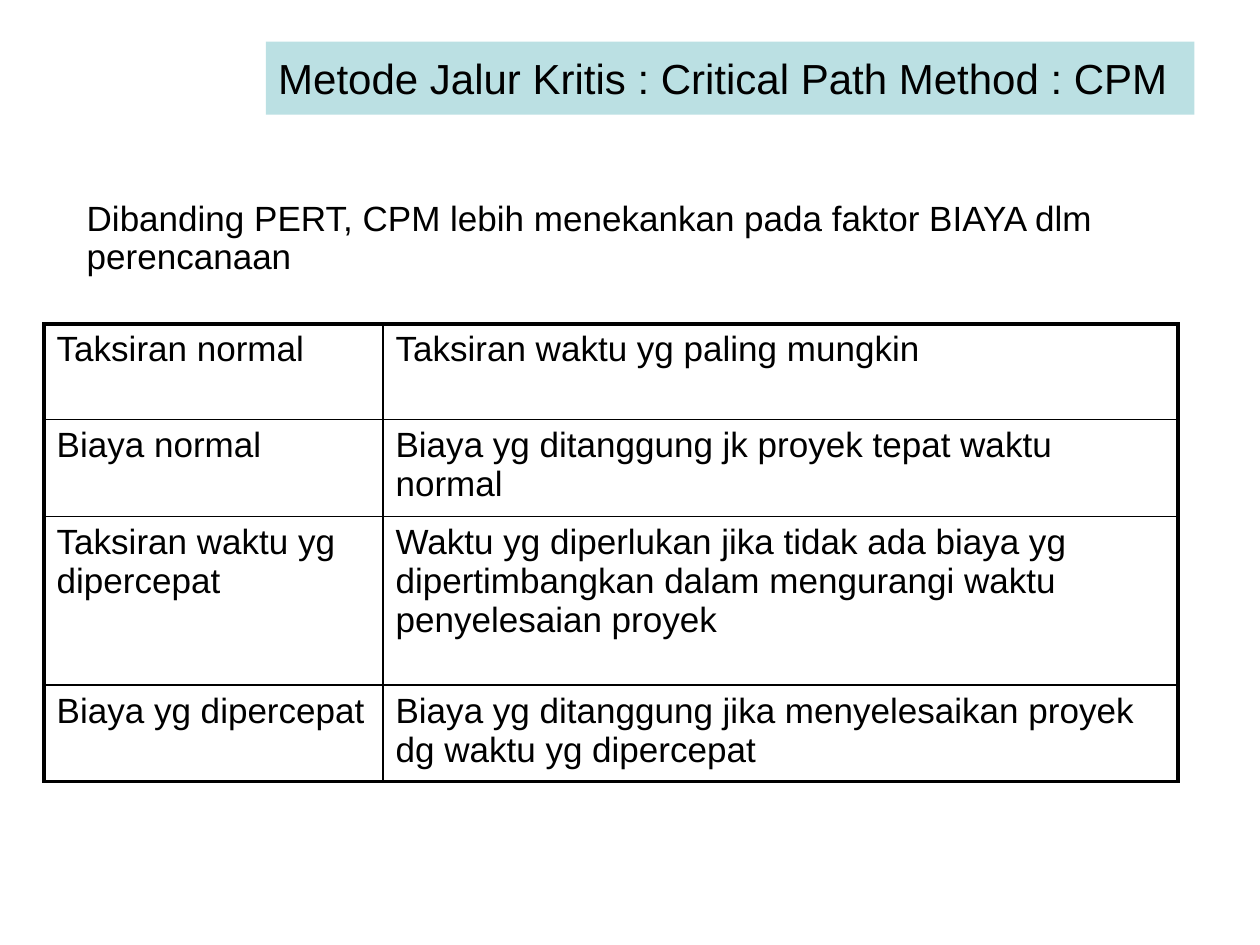
from lxml import etree
from pptx import Presentation
from pptx.dml.color import RGBColor
from pptx.enum.shapes import MSO_SHAPE
from pptx.enum.text import MSO_ANCHOR, PP_ALIGN
from pptx.oxml.ns import qn
from pptx.util import Inches, Pt

RECTANGLE = MSO_SHAPE.RECTANGLE
MIDDLE = MSO_ANCHOR.MIDDLE
LEFT = PP_ALIGN.LEFT
BLACK = RGBColor(0x00, 0x00, 0x00)
PALE_TEAL = RGBColor(0xBB, 0xE0, 0xE3)
FONT = "Arial"
OUTER_LINE, INNER_LINE = Pt(2.25), Pt(1)

TITLE = "Metode Jalur Kritis : Critical Path Method : CPM"
INTRO = "Dibanding PERT, CPM lebih menekankan pada faktor BIAYA dlm perencanaan"
TERMS = [
    ("Taksiran normal", "Taksiran waktu yg paling mungkin"),
    ("Biaya normal", "Biaya yg ditanggung jk proyek tepat waktu normal"),
    ("Taksiran waktu yg dipercepat",
     "Waktu yg diperlukan jika tidak ada biaya yg dipertimbangkan dalam "
     "mengurangi waktu penyelesaian proyek"),
    ("Biaya yg dipercepat",
     "Biaya yg ditanggung jika menyelesaikan proyek dg waktu yg dipercepat"),
]
COLUMN_WIDTHS = [2.69, 6.31]
ROW_HEIGHTS = [0.76, 0.76, 1.34, 0.76]


def write(frame, text, size):
    frame.text = text
    frame.word_wrap = True
    para = frame.paragraphs[0]
    para.alignment = LEFT
    para.font.name = FONT
    para.font.size = Pt(size)
    para.font.color.rgb = BLACK
    return para


def set_borders(cell, outer_sides):
    properties = cell._tc.get_or_add_tcPr()
    for index, (side, is_outer) in enumerate(outer_sides):
        width = OUTER_LINE if is_outer else INNER_LINE
        line = etree.Element(qn(f"a:{side}"), w=str(width))
        fill = etree.SubElement(line, qn("a:solidFill"))
        etree.SubElement(fill, qn("a:srgbClr"), val=str(BLACK))
        properties.insert(index, line)


def add_title(page):
    banner = page.shapes.add_shape(
        RECTANGLE, Inches(2.11), Inches(0.33), Inches(7.37), Inches(0.58))
    banner.shadow.inherit = False
    banner.fill.solid()
    banner.fill.fore_color.rgb = PALE_TEAL
    banner.line.fill.background()
    banner.text_frame.vertical_anchor = MIDDLE
    write(banner.text_frame, TITLE, 24)


def add_intro(page):
    box = page.shapes.add_textbox(
        Inches(0.59), Inches(1.55), Inches(9), Inches(0.87))
    write(box.text_frame, INTRO, 20).line_spacing = 0.9


def add_terms(page):
    last_row, last_column = len(TERMS) - 1, len(COLUMN_WIDTHS) - 1
    table = page.shapes.add_table(
        len(TERMS), len(COLUMN_WIDTHS), Inches(0.35), Inches(2.57),
        Inches(sum(COLUMN_WIDTHS)), Inches(sum(ROW_HEIGHTS))).table
    table.first_row = False
    table.horz_banding = False
    for column, width in zip(table.columns, COLUMN_WIDTHS):
        column.width = Inches(width)
    for row, height in zip(table.rows, ROW_HEIGHTS):
        row.height = Inches(height)
    for r, texts in enumerate(TERMS):
        for c, text in enumerate(texts):
            cell = table.cell(r, c)
            cell.fill.background()
            write(cell.text_frame, text, 20)
            set_borders(cell, [("lnL", c == 0), ("lnR", c == last_column),
                               ("lnT", r == 0), ("lnB", r == last_row)])


def main():
    deck = Presentation()
    deck.slide_width, deck.slide_height = Inches(10), Inches(7.5)
    page = deck.slides.add_slide(deck.slide_layouts[6])
    add_title(page)
    add_intro(page)
    add_terms(page)
    deck.save("out.pptx")


if __name__ == "__main__":
    main()
